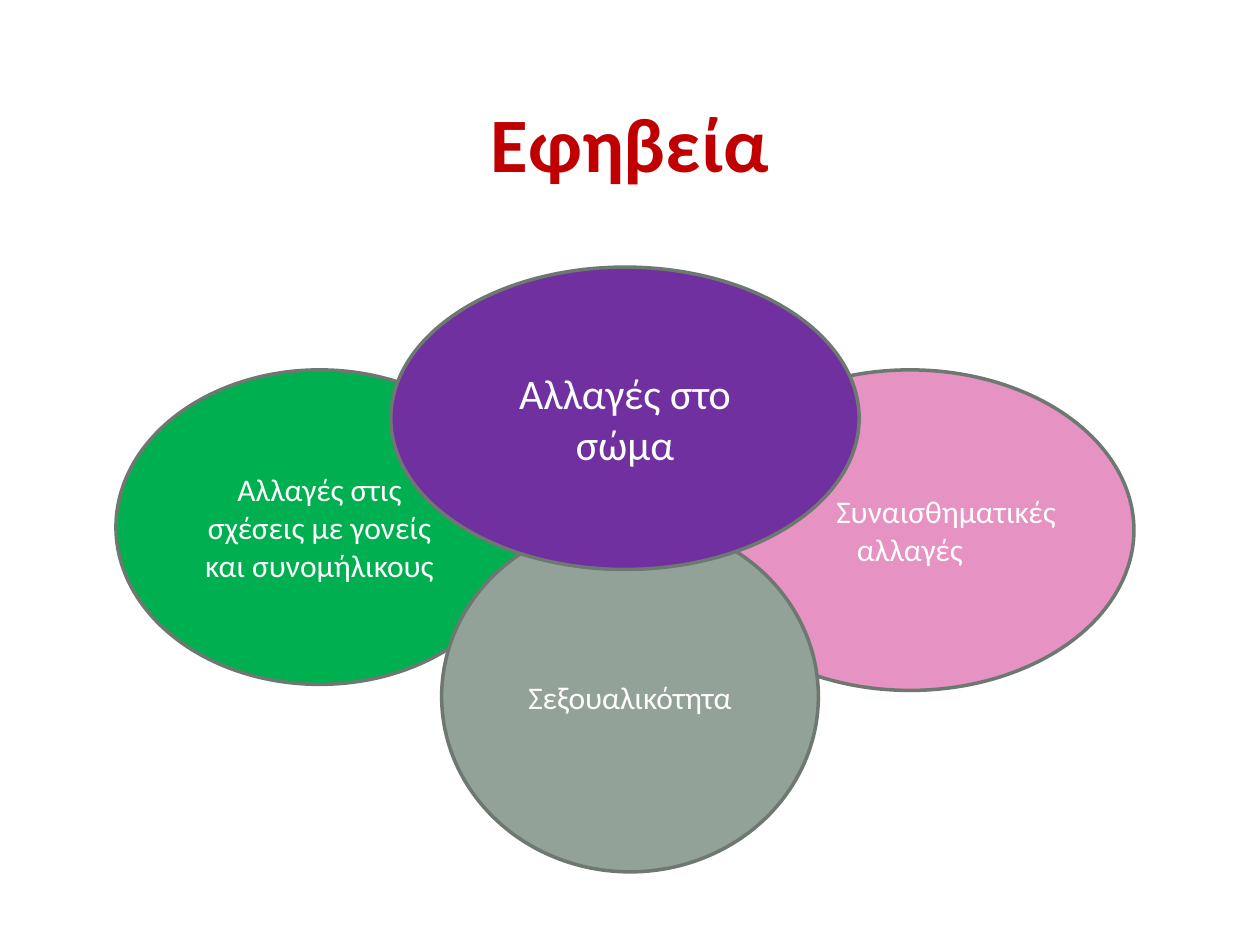
from pptx import Presentation
from pptx.dml.color import RGBColor
from pptx.enum.shapes import MSO_SHAPE
from pptx.enum.text import MSO_ANCHOR, PP_ALIGN
from pptx.util import Inches, Pt

OVAL = MSO_SHAPE.OVAL
MIDDLE = MSO_ANCHOR.MIDDLE
CENTER, RIGHT = PP_ALIGN.CENTER, PP_ALIGN.RIGHT
WIDE, HIGH = 10, 7.5
FONT = "Calibri"
EDGE, WHITE, RED = "6D7871", "FFFFFF", "C00000"

# Each oval: share of the cluster box (left, top, width, height),
# fill, text size, lines with their alignment; back to front
OVALS = [
    ((0, 0.17, 0.4, 0.52), "00B050", 18,
     [("Αλλαγές στις", CENTER),
      ("σχέσεις με γονείς και συνομήλικους", CENTER)]),
    ((0.56, 0.17, 0.44, 0.53), "E692C2", 18,
     [("Συναισθηματικές", RIGHT), ("αλλαγές", CENTER)]),
    ((0.32, 0.42, 0.37, 0.58), "93A299", 18,
     [("Σεξουαλικότητα", CENTER)]),
    ((0.27, 0, 0.46, 0.5), "7030A0", 24,
     [("Αλλαγές στο σώμα", CENTER)]),
]


def color(code):
    return RGBColor.from_string(code)


def place(shape, box):
    shape.left, shape.top, shape.width, shape.height = map(Inches, box)


def write(shape, lines, size, ink, bold=False):
    frame = shape.text_frame
    frame.word_wrap = True
    frame.vertical_anchor = MIDDLE
    for i, (text, align) in enumerate(lines):
        para = frame.add_paragraph() if i else frame.paragraphs[0]
        para.text = text
        para.alignment = align
        font = para.font
        font.name, font.size, font.bold = FONT, Pt(size), bold
        font.color.rgb = color(ink)


def add_title(slide, box):
    title = slide.shapes.title
    place(title, box)
    write(title, [("Εφηβεία", CENTER)], 44, RED, True)


def add_ovals(slide, box):
    left, top, width, height = box
    for (x, y, w, h), fill, size, lines in OVALS:
        spot = (left + x * width, top + y * height, w * width, h * height)
        oval = slide.shapes.add_shape(OVAL, *map(Inches, spot))
        oval.shadow.inherit = False
        oval.fill.solid()
        oval.fill.fore_color.rgb = color(fill)
        oval.line.color.rgb = color(EDGE)
        oval.line.width = Pt(2)
        write(oval, lines, size, WHITE)


def main():
    deck = Presentation()
    deck.slide_width, deck.slide_height = Inches(WIDE), Inches(HIGH)
    slide = deck.slides.add_slide(deck.slide_layouts[5])
    # Heading above, overlapping ovals below
    add_title(slide, (0.05 * WIDE, 0.5, 0.9 * WIDE, 1.25))
    add_ovals(slide, (0.92, 2.12, 8.08, 4.8))
    deck.save("out.pptx")


if __name__ == "__main__":
    main()
